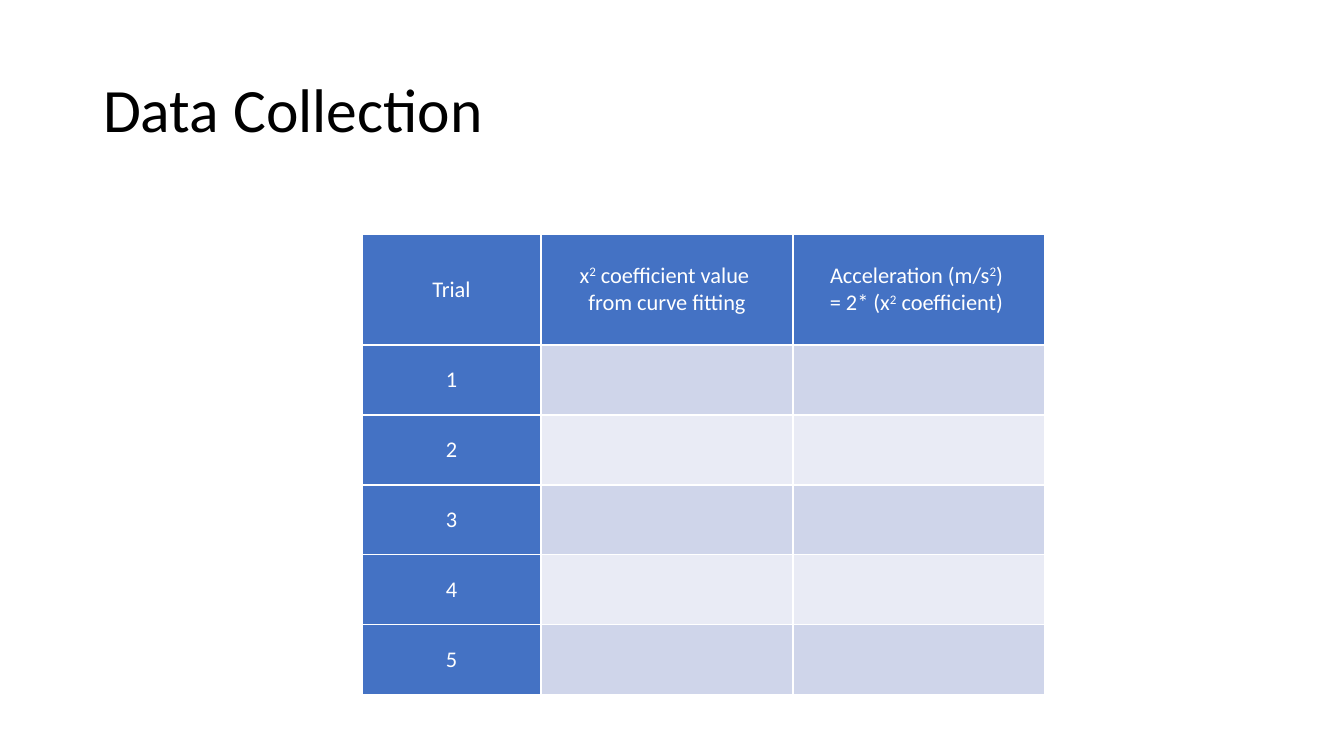
from lxml import etree
from pptx import Presentation, util as u
from pptx.dml.color import RGBColor
from pptx.enum import text
from pptx.oxml.ns import qn

EMU_PER_INCH, PX_PER_INCH = 914400, 100.8
COLORS = {
    "title": "000000",
    "white": "FFFFFF",
    "header": "4472C4",
    "odd": "CFD5EA",
    "even": "E9EBF5",
}
HEADINGS = [
    "Trial",
    "x^2^ coefficient value \nfrom curve fitting",
    "Acceleration (m/s^2^) \n= 2* (x^2^ coefficient) ",
]
TRIALS = 5
COL_WIDTHS = [179, 252, 252]
ROW_HEIGHTS = [111] + [70] * TRIALS


def px(n):
    return u.Emu(round(n * EMU_PER_INCH / PX_PER_INCH))


def rgb(name):
    return RGBColor.from_string(COLORS[name])


def write(tf, content, size, color, align=text.PP_ALIGN.LEFT, spacing=1.0):
    """Fill a text frame; ^ switches superscript on and off, a newline breaks the line."""
    tf.word_wrap = True
    tf.vertical_anchor = text.MSO_ANCHOR.MIDDLE
    p = tf.paragraphs[0]
    p.alignment, p.line_spacing = align, spacing
    for i, piece in enumerate(content.split("^")):
        for j, part in enumerate(piece.split("\n")):
            if j:
                p.add_line_break()
            r = p.add_run()
            r.text = part
            r.font.name, r.font.size = "Calibri", u.Pt(size)
            r.font.bold = False
            r.font.color.rgb = rgb(color)
            if i % 2:
                r._r.get_or_add_rPr().set("baseline", "30000")


def style_cell(cell, fill):
    """Give a cell thin white borders and a solid fill."""
    tc_pr = cell._tc.get_or_add_tcPr()
    for side in ("a:lnL", "a:lnR", "a:lnT", "a:lnB"):
        ln = etree.SubElement(tc_pr, qn(side), w=str(u.Pt(1)))
        solid = etree.SubElement(ln, qn("a:solidFill"))
        etree.SubElement(solid, qn("a:srgbClr"), val=COLORS["white"])
    cell.fill.solid()
    cell.fill.fore_color.rgb = rgb(fill)


def label_cell(cell, content):
    cell.margin_left = cell.margin_right = px(7)
    cell.margin_top = cell.margin_bottom = 0
    cell.vertical_anchor = text.MSO_ANCHOR.MIDDLE
    write_cell = cell.text_frame
    write(write_cell, content, 16, "white", text.PP_ALIGN.CENTER)


def add_title(slide, content):
    sp = slide.shapes.title
    sp.left, sp.top, sp.width, sp.height = px(93), px(40), px(1159), px(146)
    sp.text_frame.auto_size = text.MSO_AUTO_SIZE.NONE
    write(sp.text_frame, content, 44, "title", spacing=0.9)


def add_trial_table(slide):
    frame = slide.shapes.add_table(
        len(ROW_HEIGHTS), len(COL_WIDTHS), px(362), px(234),
        px(sum(COL_WIDTHS)), px(sum(ROW_HEIGHTS)))
    table = frame.table
    for column, width in zip(table.columns, COL_WIDTHS):
        column.width = px(width)
    for i, (row, height) in enumerate(zip(table.rows, ROW_HEIGHTS)):
        row.height = px(height)
        for j, cell in enumerate(row.cells):
            if i == 0 or j == 0:
                style_cell(cell, "header")
                label_cell(cell, str(i) if i else HEADINGS[j])
            else:
                style_cell(cell, "odd" if i % 2 else "even")


def main():
    prs = Presentation()
    prs.slide_width, prs.slide_height = px(1344), px(756)
    slide = prs.slides.add_slide(prs.slide_layouts[5])
    add_title(slide, "Data Collection")
    add_trial_table(slide)
    prs.save("out.pptx")


if __name__ == "__main__":
    main()
